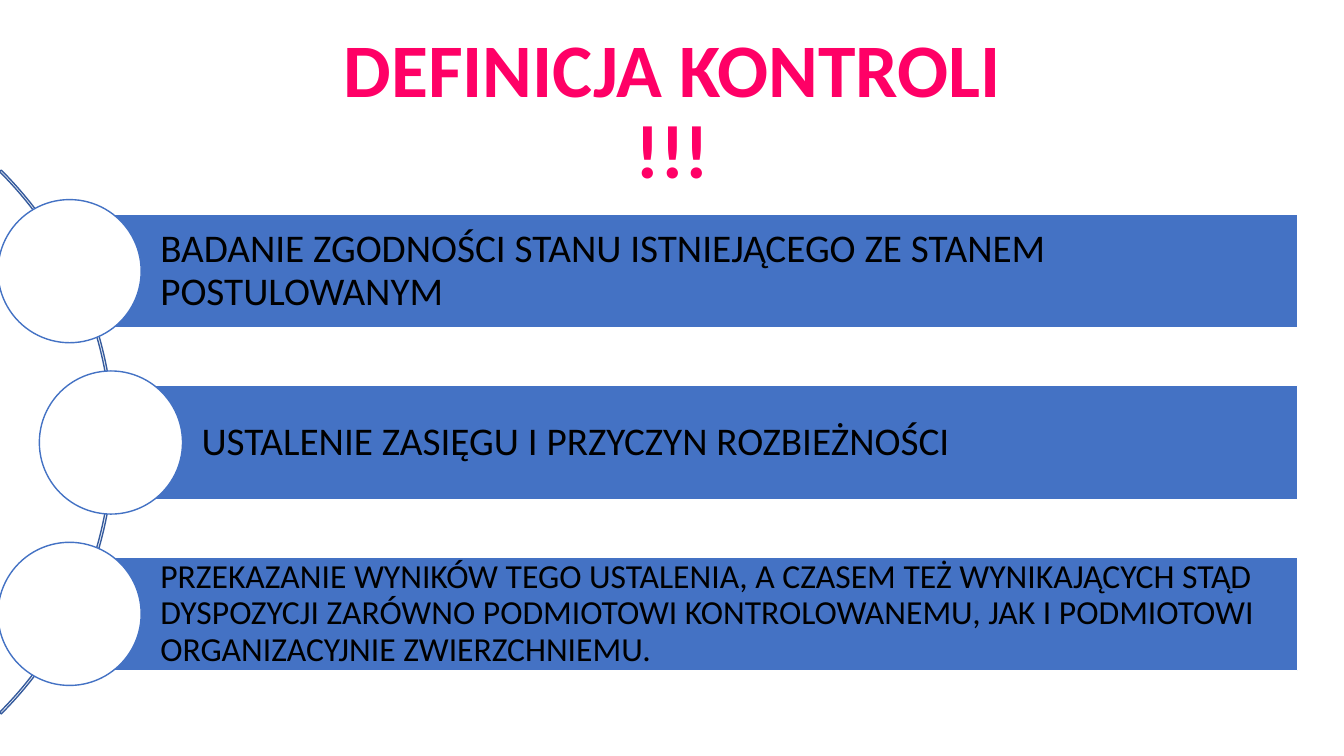
from pptx import Presentation
from pptx.dml.color import RGBColor
from pptx.enum.shapes import MSO_SHAPE as Shape
from pptx.enum.text import MSO_ANCHOR as Anchor, PP_ALIGN as Align
from pptx.util import Inches, Pt

COLORS = {
    "title": "FF0066",
    "bar": "4472C4",
    "arc": "365B9D",
    "white": "FFFFFF",
    "text": "000000",
}
FONT = "Calibri"
BAR_RIGHT, BAR_HEIGHT = 12.87, 1.13
CIRCLE_SIZE = 1.42
FIRST_CENTER, ROW_PITCH = 2.69, 1.7

STEPS = [
    (0.69, 28, 0.08, "BADANIE ZGODNOŚCI STANU ISTNIEJĄCEGO ZE STANEM POSTULOWANYM"),
    (1.1, 28, 0.08, "USTALENIE ZASIĘGU I PRZYCZYN ROZBIEŻNOŚCI"),
    (0.69, 24, 0.07, "PRZEKAZANIE WYNIKÓW TEGO USTALENIA, A CZASEM TEŻ WYNIKAJĄCYCH STĄD "
     "DYSPOZYCJI ZARÓWNO PODMIOTOWI KONTROLOWANEMU, JAK I PODMIOTOWI "
     "ORGANIZACYJNIE ZWIERZCHNIEMU."),
]


def color(name):
    return RGBColor.from_string(COLORS[name])


def add_outlined(slide, kind, box, line, fill=None):
    shape = slide.shapes.add_shape(kind, *map(Inches, box))
    shape.shadow.inherit = False
    if fill:
        shape.fill.solid()
        shape.fill.fore_color.rgb = color(fill)
    else:
        shape.fill.background()
    shape.line.color.rgb = color(line)
    shape.line.width = Pt(1)
    return shape


def write(frame, text, size, text_color, align, bold=False):
    frame.word_wrap = True
    frame.vertical_anchor = Anchor.MIDDLE
    paragraph = frame.paragraphs[0]
    paragraph.text = text
    paragraph.alignment = align
    paragraph.line_spacing = 0.9
    paragraph.font.name = FONT
    paragraph.font.size = Pt(size)
    paragraph.font.bold = bold
    paragraph.font.color.rgb = color(text_color)


def add_title(slide):
    title = slide.shapes.add_textbox(Inches(0.92), Inches(0.4), Inches(11.5), Inches(1.45))
    write(title.text_frame, "DEFINICJA KONTROLI\v!!!", 54, "title", Align.CENTER, bold=True)


def add_arc(slide):
    arc = add_outlined(slide, Shape.BLOCK_ARC, (-6.5, 0.57, 7.63, 7.63), "arc")
    for index, value in enumerate((189, 27, 0.003)):
        arc.adjustments[index] = value


def add_step(slide, center, left, size, margin, text):
    bar_box = (left, center - BAR_HEIGHT / 2, BAR_RIGHT - left, BAR_HEIGHT)
    bar = add_outlined(slide, Shape.RECTANGLE, bar_box, "white", "bar")
    frame = bar.text_frame
    frame.margin_left = Inches(0.9)
    frame.margin_top = frame.margin_right = frame.margin_bottom = Inches(margin)
    write(frame, text, size, "text", Align.LEFT)

    radius = CIRCLE_SIZE / 2
    circle_box = (left - radius, center - radius, CIRCLE_SIZE, CIRCLE_SIZE)
    add_outlined(slide, Shape.OVAL, circle_box, "bar", "white")


def main():
    deck = Presentation()
    deck.slide_width, deck.slide_height = Inches(13.33), Inches(7.5)
    slide = deck.slides.add_slide(deck.slide_layouts[6])
    add_title(slide)
    add_arc(slide)
    for row, step in enumerate(STEPS):
        add_step(slide, FIRST_CENTER + row * ROW_PITCH, *step)
    deck.save("out.pptx")


if __name__ == "__main__":
    main()
